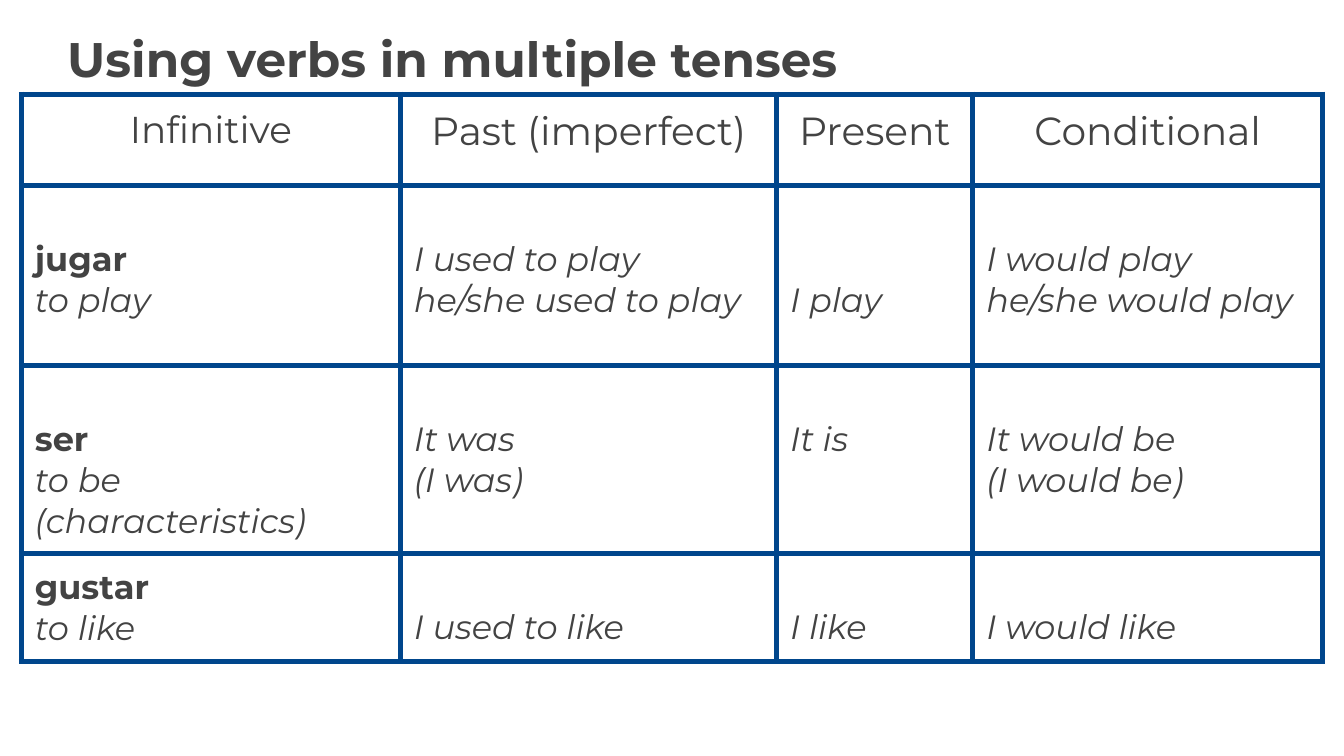
from lxml import etree
from pptx import Presentation
from pptx.dml.color import RGBColor
from pptx.enum.text import MSO_ANCHOR, PP_ALIGN
from pptx.oxml.ns import qn
from pptx.util import Inches, Pt

CENTER, LEFT = PP_ALIGN.CENTER, PP_ALIGN.LEFT
TOP = MSO_ANCHOR.TOP

SLIDE_W = 10
SLIDE_H = SLIDE_W * 9 / 16
FONT = "Montserrat"
INK, RULE, PAPER = "434343", "00468C", "FFFFFF"
RULE_WIDTH = 3
PADDING = 0.1
LINE_HEIGHT = 0.3  # one line of 18 pt text

COLUMNS = [2.82, 2.8, 1.46, 2.6]
ROWS = [0.68, 1.34, 1.11, 0.79]  # rows grow to fit their text
TENSES = ["Infinitive", "Past (imperfect)", "Present", "Conditional"]
# Each cell: number of lines it starts below the row's top, then its paragraphs.
VERBS = [
    [(1, ["jugar", "to play"]),
     (1, ["I used to play", "he/she used to play"]),
     (2, ["I play"]),
     (1, ["I would play", "he/she would play"])],
    [(1, ["ser", "to be", "(characteristics)"]),
     (1, ["It was\n(I was)"]),
     (1, ["It is"]),
     (1, ["It would be\n(I would be)"])],
    [(0, ["gustar", "to like"]),
     (1, ["I used to like"]),
     (1, ["I like"]),
     (1, ["I would like"])],
]


def color(hex_code):
    return RGBColor.from_string(hex_code)


def write(paragraph, text, size=18, bold=False, italic=False, align=LEFT, spacing=None):
    """Fill a paragraph with formatted text; a newline becomes a line break."""
    paragraph.text = text
    paragraph.alignment = align
    if spacing:
        paragraph.line_spacing = spacing
    for run in paragraph.runs:
        font = run.font
        font.name, font.size = FONT, Pt(size)
        font.bold, font.italic = bold, italic
        font.color.rgb = color(INK)


def style_cell(cell, lead_lines=0):
    """Give a cell its padding, borders and fill; lead_lines lowers its text."""
    cell.margin_left = cell.margin_right = cell.margin_bottom = Inches(PADDING)
    cell.margin_top = Inches(PADDING + lead_lines * LINE_HEIGHT)
    cell.vertical_anchor = TOP
    properties = cell._tc.get_or_add_tcPr()
    for side in ("a:lnL", "a:lnR", "a:lnT", "a:lnB"):
        line = etree.SubElement(properties, qn(side), w=str(Pt(RULE_WIDTH)))
        fill = etree.SubElement(line, qn("a:solidFill"))
        etree.SubElement(fill, qn("a:srgbClr"), val=RULE)
    cell.fill.solid()
    cell.fill.fore_color.rgb = color(PAPER)


def add_title(slide, left, top, width, height):
    frame = slide.shapes.add_textbox(
        Inches(left), Inches(top), Inches(width), Inches(height)).text_frame
    frame.word_wrap = True
    frame.margin_left = frame.margin_right = frame.margin_top = frame.margin_bottom = 0
    write(frame.paragraphs[0], "Using verbs in multiple tenses",
          size=26, bold=True, spacing=1.15)


def add_verb_table(slide, left, top):
    table = slide.shapes.add_table(
        len(ROWS), len(COLUMNS), Inches(left), Inches(top),
        Inches(sum(COLUMNS)), Inches(sum(ROWS))).table
    table.first_row = table.horz_banding = False
    for column, width in zip(table.columns, COLUMNS):
        column.width = Inches(width)
    for row, height in zip(table.rows, ROWS):
        row.height = Inches(height)

    for c, tense in enumerate(TENSES):
        heading = table.cell(0, c)
        style_cell(heading)
        write(heading.text_frame.paragraphs[0], tense,
              size=21 if c else 20, align=CENTER)

    for r, verb in enumerate(VERBS, start=1):
        for c, (lead_lines, forms) in enumerate(verb):
            cell = table.cell(r, c)
            style_cell(cell, lead_lines)
            frame = cell.text_frame
            for i, form in enumerate(forms):
                paragraph = frame.add_paragraph() if i else frame.paragraphs[0]
                infinitive = c == 0 and i == 0
                write(paragraph, form, bold=infinitive, italic=not infinitive)


def main():
    deck = Presentation()
    deck.slide_width, deck.slide_height = Inches(SLIDE_W), Inches(SLIDE_H)
    slide = deck.slides.add_slide(deck.slide_layouts[6])
    add_title(slide, 0.05 * SLIDE_W, 0.15, 0.9 * SLIDE_W, 0.89)
    add_verb_table(slide, (SLIDE_W - sum(COLUMNS)) / 2, 0.7)
    deck.save("out.pptx")


if __name__ == "__main__":
    main()
